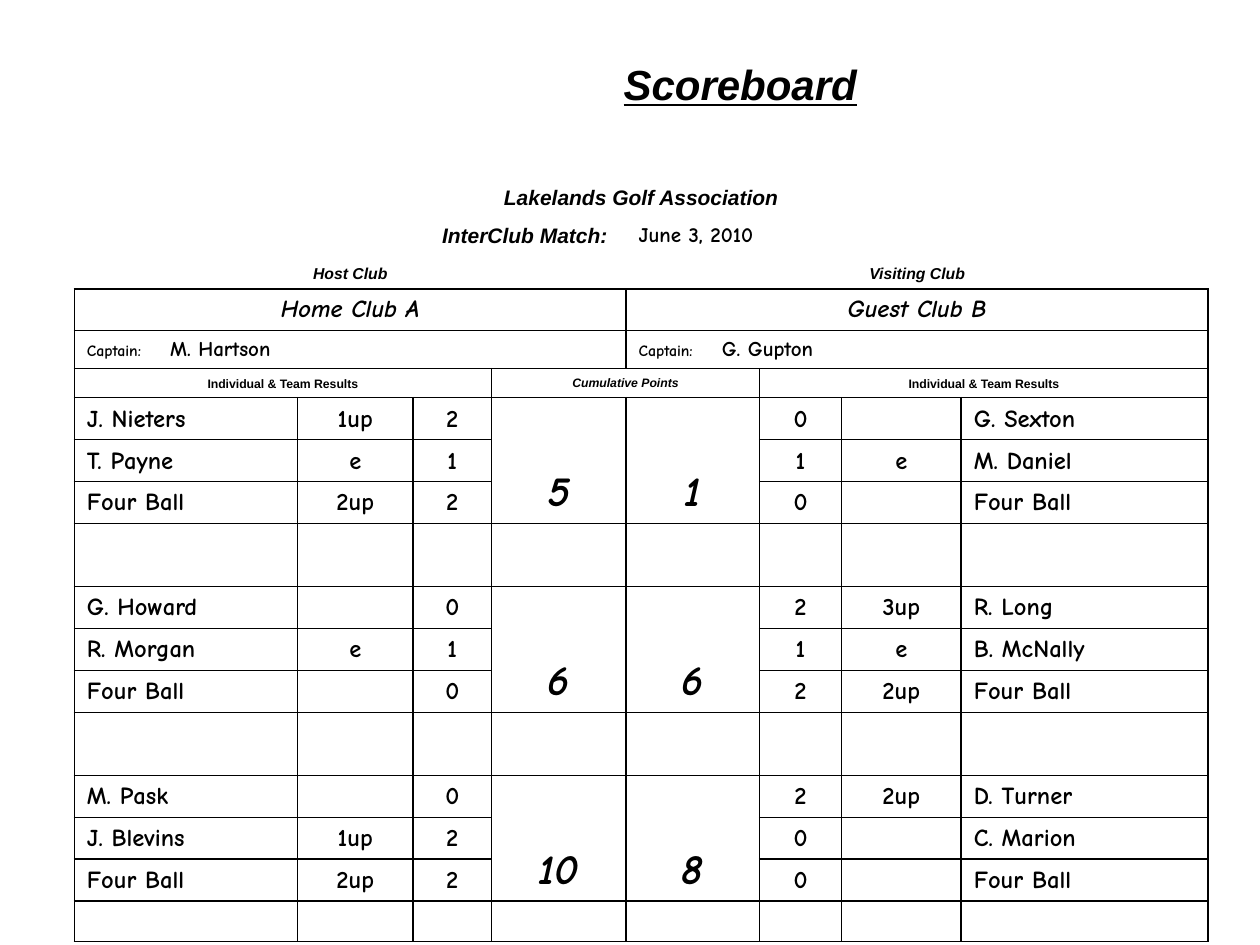
"""Build the golf match scoreboard slide."""
import lxml.etree
import pptx
import pptx.dml.color
import pptx.enum.text
import pptx.oxml
import pptx.oxml.ns
import pptx.util

ALIGN = pptx.enum.text.PP_ALIGN
ANCHOR = pptx.enum.text.MSO_ANCHOR
COLUMN_SHARES = [0.177, 0.092, 0.062, 0.107, 0.106, 0.065, 0.095, 0.196]
HEADING_HEIGHTS = [0.29, 0.30, 0.28, 0.33, 0.30, 0.23]
BLOCK_HEIGHTS = [1 / 3] * 3 + [0.5]
LAST_HEIGHT = 0.32
FIRST_RULED_ROW = 3

MATCHES = [
    (("5", "1"), [
        ("J. Nieters", "1up", "2", "0", "", "G. Sexton"),
        ("T. Payne", "e", "1", "1", "e", "M. Daniel"),
        ("Four Ball", "2up", "2", "0", "", "Four Ball"),
    ]),
    (("6", "6"), [
        ("G. Howard", "", "0", "2", "3up", "R. Long"),
        ("R. Morgan", "e", "1", "1", "e", "B. McNally"),
        ("Four Ball", "", "0", "2", "2up", "Four Ball"),
    ]),
    (("10", "8"), [
        ("M. Pask", "", "0", "2", "2up", "D. Turner"),
        ("J. Blevins", "1up", "2", "0", "", "C. Marion"),
        ("Four Ball", "2up", "2", "0", "", "Four Ball"),
    ]),
]


def color(value):
    return pptx.dml.color.RGBColor.from_string(value)


class Scoreboard:
    heading_font = "Arial"
    score_font = "Comic Neue"
    ink = "000000"
    no_grid_style = "{2D5ABB26-0587-4C30-8999-92F81FD0307C}"

    def __init__(self, presentation):
        self.width = presentation.slide_width
        self.height = presentation.slide_height
        self.slide = presentation.slides.add_slide(presentation.slide_layouts[5])
        self.table = None

    def across(self, share):
        return round(self.width * share)

    def down(self, share):
        return round(self.height * share)

    def format_run(self, run, size, font, italic=False):
        run.font.size = pptx.util.Pt(size)
        run.font.name = font
        run.font.bold = True
        run.font.italic = italic
        run.font.color.rgb = color(self.ink)

    def add_title(self, text):
        title = self.slide.shapes.title
        title.left, title.top = self.across(0.225), self.down(0.055)
        title.width, title.height = self.across(0.725), self.down(0.06)
        frame = title.text_frame
        frame.text = text
        frame.vertical_anchor = ANCHOR.TOP
        paragraph = frame.paragraphs[0]
        paragraph.alignment = ALIGN.CENTER
        self.format_run(paragraph.runs[0], 24, self.heading_font, italic=True)
        paragraph.runs[0].font.underline = True

    def add_table(self, row_heights):
        row_shares = [height / 7.5 for height in row_heights]
        frame = self.slide.shapes.add_table(
            len(row_shares), len(COLUMN_SHARES), self.across(0.059), self.down(0.19),
            self.across(sum(COLUMN_SHARES)), self.down(sum(row_shares)))
        self.table = frame.table
        self.table.first_row = self.table.horz_banding = False
        properties = self.table._tbl.tblPr
        properties.find(pptx.oxml.ns.qn("a:tableStyleId")).text = self.no_grid_style
        for column, share in zip(self.table.columns, COLUMN_SHARES):
            column.width = self.across(share)
        for row_index, (row, share) in enumerate(zip(self.table.rows, row_shares)):
            row.height = self.down(share)
            sides = "LRTB" if row_index >= FIRST_RULED_ROW else ""
            if row_index == FIRST_RULED_ROW - 1:
                sides = "B"
            for cell in row.cells:
                cell.fill.background()
                self.add_borders(cell, sides)
                paragraph = cell.text_frame.paragraphs[0]._p
                end = lxml.etree.SubElement(paragraph, pptx.oxml.ns.qn("a:endParaRPr"))
                end.set("sz", "1000")

    def add_borders(self, cell, sides):
        properties = cell._tc.get_or_add_tcPr()
        for position, side in enumerate(sides):
            border = pptx.oxml.parse_xml(
                f'<a:ln{side} {pptx.oxml.ns.nsdecls("a")} w="12700"><a:solidFill>'
                f'<a:srgbClr val="{self.ink}"/></a:solidFill></a:ln{side}>')
            properties.insert(position, border)

    def add_cell(self, row, column, text, size, font, italic=False, align=ALIGN.CENTER,
                 anchor=ANCHOR.BOTTOM, span=(1, 1)):
        cell = self.table.cell(row, column)
        if span != (1, 1):
            cell.merge(self.table.cell(row + span[0] - 1, column + span[1] - 1))
        cell.vertical_anchor = anchor
        paragraph = cell.text_frame.paragraphs[0]
        paragraph.text = text
        paragraph.alignment = align
        properties = paragraph._p.get_or_add_pPr()
        indent = pptx.util.Inches(0.38)
        properties.set("marL", str(indent))
        properties.set("indent", str(-indent))
        for run in paragraph.runs:
            self.format_run(run, size, font, italic)
        return paragraph

    def add_captain(self, row, column, name):
        paragraph = self.add_cell(row, column, "Captain:", 9, self.score_font,
                                  align=ALIGN.LEFT, span=(1, 4))
        gap, captain = paragraph.add_run(), paragraph.add_run()
        gap.text, captain.text = " ", name
        self.format_run(gap, 9, self.score_font)
        self.format_run(captain, 12, self.score_font)
        gap._r.get_or_add_rPr().set("spc", "1350")

    def add_headings(self):
        arial, comic = self.heading_font, self.score_font
        self.add_cell(0, 0, "Lakelands Golf Association", 12, arial, True,
                      anchor=ANCHOR.MIDDLE, span=(1, 8))
        self.add_cell(1, 0, "InterClub Match: ", 12, arial, True, ALIGN.RIGHT, span=(1, 4))
        self.add_cell(1, 4, "June 3, 2010", 12, comic, align=ALIGN.LEFT, span=(1, 4))
        clubs = [("Host Club", "Home Club A", "M. Hartson"),
                 ("Visiting Club", "Guest Club B", "G. Gupton")]
        for column, (role, club, captain) in zip((0, 4), clubs):
            self.add_cell(2, column, role, 9, arial, True, span=(1, 4))
            self.add_cell(3, column, club, 14, comic, True, anchor=ANCHOR.MIDDLE, span=(1, 4))
            self.add_captain(4, column, captain)
        for column in (0, 5):
            self.add_cell(5, column, "Individual & Team Results", 7, arial, span=(1, 3))
        self.add_cell(5, 3, "Cumulative Points", 7, arial, True,
                      anchor=ANCHOR.MIDDLE, span=(1, 2))

    def add_match(self, first_row, totals, results):
        for column, total in zip((3, 4), totals):
            self.add_cell(first_row, column, total, 24, self.score_font, True, span=(3, 1))
        for row, result in enumerate(results, first_row):
            for column, text in zip((0, 1, 2, 5, 6, 7), result):
                if text:
                    align = ALIGN.LEFT if column in (0, 7) else ALIGN.CENTER
                    self.add_cell(row, column, text, 14, self.score_font, align=align)


def main():
    presentation = pptx.Presentation()
    presentation.slide_width = pptx.util.Inches(10)
    presentation.slide_height = pptx.util.Inches(7.5)
    scoreboard = Scoreboard(presentation)
    scoreboard.add_title("Scoreboard")
    score_heights = (BLOCK_HEIGHTS * len(MATCHES))[:-1] + [LAST_HEIGHT]
    scoreboard.add_table(HEADING_HEIGHTS + score_heights)
    scoreboard.add_headings()
    for index, (totals, results) in enumerate(MATCHES):
        first_row = len(HEADING_HEIGHTS) + index * len(BLOCK_HEIGHTS)
        scoreboard.add_match(first_row, totals, results)
    presentation.save("out.pptx")


if __name__ == "__main__":
    main()
